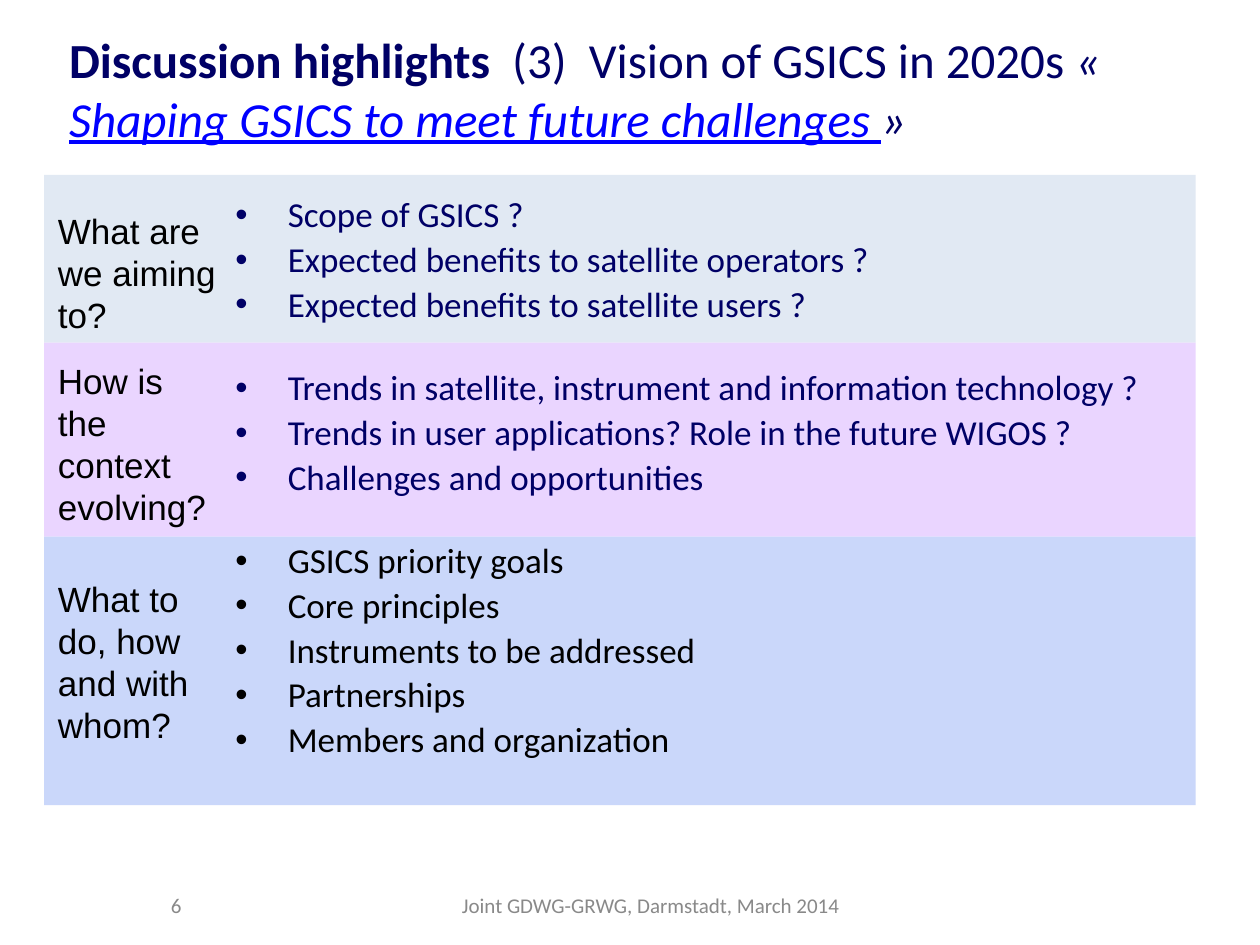
from pptx import Presentation
from pptx.dml.color import RGBColor
from pptx.enum.shapes import MSO_SHAPE as Shape
from pptx.enum.text import MSO_ANCHOR as Anchor, PP_ALIGN as Align
from pptx.oxml import parse_xml
from pptx.oxml.ns import nsdecls
from pptx.util import Pt

NAVY, BLUE, BLACK, GREY = "000066", "0000FF", "000000", "898989"

# Each theme: band colour, band height, question, label offset, label height,
# bullet colour, bullets
THEMES = [
    ("E1E9F3", 95.8, "What are we aiming to?", 16.6, 78.5, NAVY,
     ["Scope of GSICS ?",
      "Expected benefits to satellite operators ?",
      "Expected benefits to satellite users ?"]),
    ("EAD5FF", 110.9, "How is \vthe context evolving?", 6.5, 102.2, NAVY,
     ["Trends in satellite, instrument and information technology ?",
      "Trends in user applications? Role in the future WIGOS ?",
      "Challenges and opportunities"]),
    ("CAD7FA", 153.4, "What to do, how and with whom?", 20.2, 102.2, BLACK,
     ["GSICS priority goals", "Core principles", "Instruments to be addressed",
      "Partnerships", "Members and organization"]),
]


def color(hex_value):
    return RGBColor.from_string(hex_value)


def style(font, size, hex_value, name="Calibri"):
    font.size, font.name = Pt(size), name
    font.color.rgb = color(hex_value)


def text_frame(slide, box, insets=(7.2, 3.6), anchor=Anchor.TOP):
    frame = slide.shapes.add_textbox(*map(Pt, box)).text_frame
    frame.word_wrap = True
    frame.vertical_anchor = anchor
    frame.margin_left = frame.margin_right = Pt(insets[0])
    frame.margin_top = frame.margin_bottom = Pt(insets[1])
    return frame


def add_title(slide, box):
    heading = text_frame(slide, box, anchor=Anchor.MIDDLE).paragraphs[0]
    for words, hex_value, bold, italic, underline in [
        ("Discussion highlights", NAVY, True, False, False),
        ("  (3)  Vision of GSICS in 2020s ", NAVY, False, False, False),
        ("«", NAVY, False, True, False),
        (" Shaping GSICS to meet future challenges ", BLUE, False, True, True),
        ("»", NAVY, False, True, False),
    ]:
        run = heading.add_run()
        run.text = words
        style(run.font, 28, hex_value)
        run.font.bold, run.font.italic, run.font.underline = bold, italic, underline


def add_bands(slide, left, top, width):
    for fill, height, question, offset, label_height, _, _ in THEMES:
        band = slide.shapes.add_shape(
            Shape.RECTANGLE, Pt(left), Pt(top), Pt(width), Pt(height))
        band.shadow.inherit = False
        band.fill.solid()
        band.fill.fore_color.rgb = color(fill)
        band.line.fill.background()

        # Question at the left of the band
        label = text_frame(slide, (left + 1.4, top + offset, 107.3, label_height),
                           insets=(6.5, 3))
        label.text = question
        for run in label.paragraphs[0].runs:
            style(run.font, 20, BLACK, "Arial")
        top += height


def add_bullets(slide, box):
    frame = text_frame(slide, box)
    paragraph = None
    for *_, hex_value, bullets in THEMES:
        for index, bullet in enumerate(bullets):
            if paragraph is None:
                paragraph = frame.paragraphs[0]
            else:
                paragraph = frame.add_paragraph()
                # A wider gap opens each new theme
                paragraph.space_before = Pt(4 if index else 26)
            paragraph.text = bullet
            paragraph.line_spacing = 0.9
            properties = paragraph._p.get_or_add_pPr()
            properties.set("marL", str(Pt(30)))
            properties.set("indent", str(Pt(-30)))
            properties.append(parse_xml(f'<a:buFont {nsdecls("a")} typeface="Arial"/>'))
            properties.append(parse_xml(f'<a:buChar {nsdecls("a")} char="•"/>'))
            style(paragraph.runs[0].font, 20, hex_value)


def add_footer(slide, top, height):
    for words, left, width, align in [
        ("6", 48.2, 62.6, Align.RIGHT),
        ("Joint GDWG-GRWG, Darmstadt, March 2014", 201.6, 340.6, Align.CENTER),
    ]:
        frame = text_frame(slide, (left, top, width, height), anchor=Anchor.MIDDLE)
        frame.text = words
        frame.paragraphs[0].alignment = align
        style(frame.paragraphs[0].runs[0].font, 12, GREY)


def main():
    deck = Presentation()
    deck.slide_width, deck.slide_height = Pt(720), Pt(540)
    slide = deck.slides.add_slide(deck.slide_layouts[6])
    add_footer(slide, 502.6, 28.8)
    add_bands(slide, 25.2, 100, 658)
    add_title(slide, (32.4, 15.8, 657.4, 69.1))
    add_bullets(slide, (127.4, 109.4, 563.8, 381.6))
    deck.save("out.pptx")


if __name__ == "__main__":
    main()
